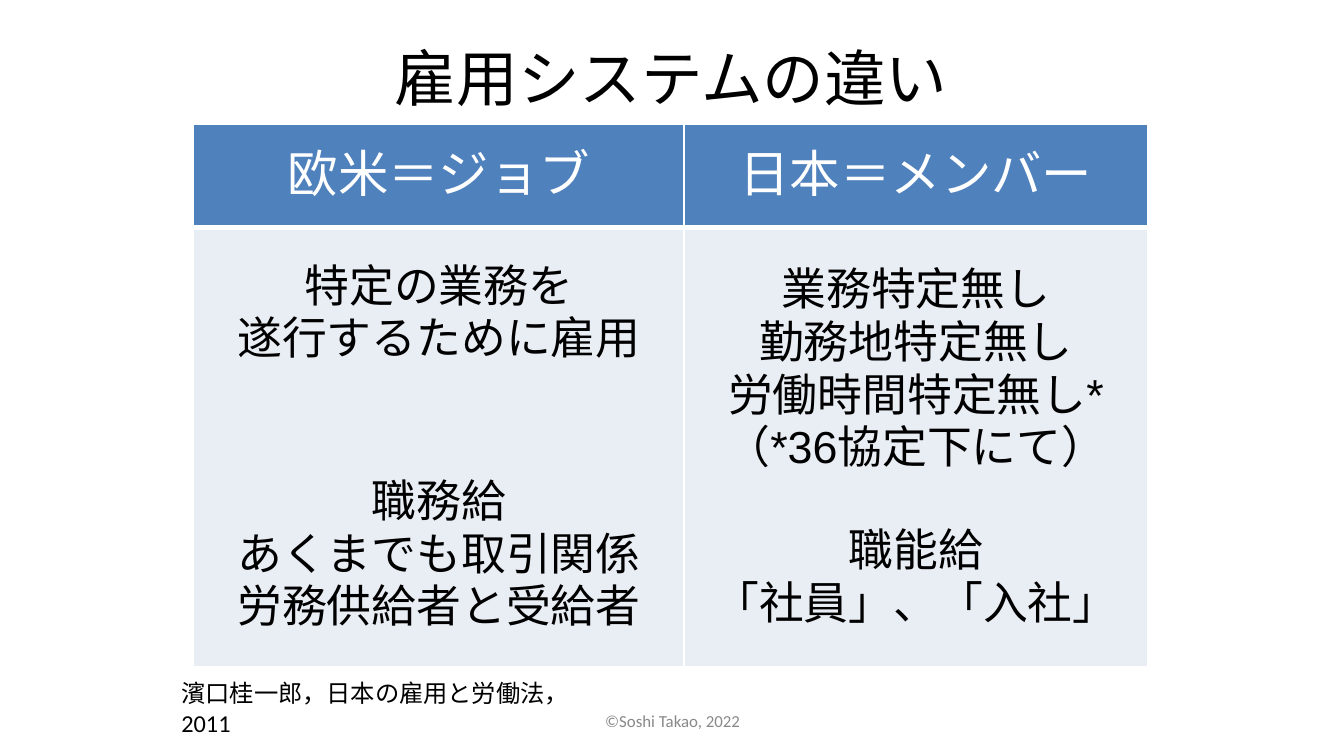
from lxml import etree
from pptx import Presentation
from pptx import util as u
from pptx.dml.color import RGBColor
from pptx.enum import text
from pptx.oxml import ns

COLORS = {"ink": "000000", "head": "4F81BD", "body": "E9EDF4",
          "line": "FFFFFF", "footer": "898989"}

TITLE = "雇用システムの違い"
SOURCE = [("濱口桂一郎，日本の雇用と労働法，", "Roboto"), ("2011", "Calibri")]
FOOTER = "©Soshi Takao, 2022"
COLUMNS = [
    {"head": "欧米＝ジョブ", "width": 9.27, "margin": 0.1, "gap": 59,
     "groups": [["特定の業務を", "遂行するために雇用"],
                ["職務給", "あくまでも取引関係", "労務供給者と受給者"]]},
    {"head": "日本＝メンバー", "width": 8.76, "margin": 0.03, "gap": 27,
     "groups": [["業務特定無し", "勤務地特定無し", ["労働時間特定無し", "*"],
                 ["（", "*36", "協定下にて）"]],
                ["職能給", "「社員」、「入社」"]]},
]
ROW_HEIGHTS = [1.96, 8.31]
THIN, THICK = 1, 3


def rgb(name):
    return RGBColor.from_string(COLORS[name])


def write(para, spans, size, color, align=text.PP_ALIGN.CENTER):
    para.alignment = align
    for words, face in spans:
        span = para.add_run()
        span.text = words
        span.font.size = u.Pt(size)
        span.font.bold = False
        span.font.name = face
        span.font.color.rgb = rgb(color)
        latin = span.font._element.find(ns.qn("a:latin"))
        east = etree.Element(ns.qn("a:ea"), typeface=face)
        latin.addnext(east)


def add_text(page, place, spans, size, color, anchor, align):
    box = page.shapes.add_textbox(*(u.Cm(length) for length in place))
    frame = box.text_frame
    frame.word_wrap = True
    frame.vertical_anchor = anchor
    frame.margin_left = frame.margin_right = u.Cm(0.13)
    frame.margin_top = frame.margin_bottom = u.Cm(0.13)
    write(frame.paragraphs[0], spans, size, color, align)


def style_cell(cell, margin, fill, borders):
    cell.margin_left = cell.margin_right = u.Cm(margin)
    cell.margin_top = cell.margin_bottom = u.Cm(margin)
    cell.vertical_anchor = text.MSO_ANCHOR.MIDDLE
    cell.fill.solid()
    cell.fill.fore_color.rgb = rgb(fill)
    properties = cell._tc.get_or_add_tcPr()
    for index, (side, width) in enumerate(borders.items()):
        line = etree.Element(ns.qn("a:ln" + side), w=str(u.Pt(width)))
        solid = etree.SubElement(line, ns.qn("a:solidFill"))
        etree.SubElement(solid, ns.qn("a:srgbClr"), val=COLORS["line"])
        properties.insert(index, line)


def add_comparison(page):
    width = sum(column["width"] for column in COLUMNS)
    table = page.shapes.add_table(
        len(ROW_HEIGHTS), len(COLUMNS), u.Cm(3.66), u.Cm(2.34),
        u.Cm(width), u.Cm(sum(ROW_HEIGHTS))).table
    table.horz_banding = False
    for row, height in zip(table.rows, ROW_HEIGHTS):
        row.height = u.Cm(height)
    for index, column in enumerate(COLUMNS):
        table.columns[index].width = u.Cm(column["width"])
        head, body = table.cell(0, index), table.cell(1, index)
        style_cell(head, column["margin"], "head",
                   {"L": THIN, "R": THIN, "T": THIN, "B": THICK})
        style_cell(body, column["margin"], "body",
                   {"L": THIN, "R": THIN, "T": THICK, "B": THIN})
        write(head.text_frame.paragraphs[0], [(column["head"], "Roboto")], 27, "line")
        para = body.text_frame.paragraphs[0]
        for group_index, group in enumerate(column["groups"]):
            for line_index, line in enumerate(group):
                if group_index or line_index:
                    para = body.text_frame.add_paragraph()
                if group_index and not line_index:
                    para.space_before = u.Pt(column["gap"])
                parts = [line] if isinstance(line, str) else line
                spans = [(part, "Arial" if part.startswith("*") else "Roboto")
                         for part in parts]
                write(para, spans, 24, "ink")


def main():
    deck = Presentation()
    deck.slide_width, deck.slide_height = u.Cm(25.4), u.Cm(14.29)
    page = deck.slides.add_slide(deck.slide_layouts[6])
    middle, top = text.MSO_ANCHOR.MIDDLE, text.MSO_ANCHOR.TOP
    center, left = text.PP_ALIGN.CENTER, text.PP_ALIGN.LEFT
    add_text(page, (8.81, 13.34, 7.8, 0.58), [(FOOTER, "Calibri")],
             9, "footer", middle, center)
    add_text(page, (4.11, 0.25, 17.15, 2.39), [(TITLE, "Arial")],
             33, "ink", middle, center)
    add_comparison(page)
    add_text(page, (3.3, 12.7, 7.8, 0.81), SOURCE, 13, "ink", top, left)
    deck.save("out.pptx")


if __name__ == "__main__":
    main()
